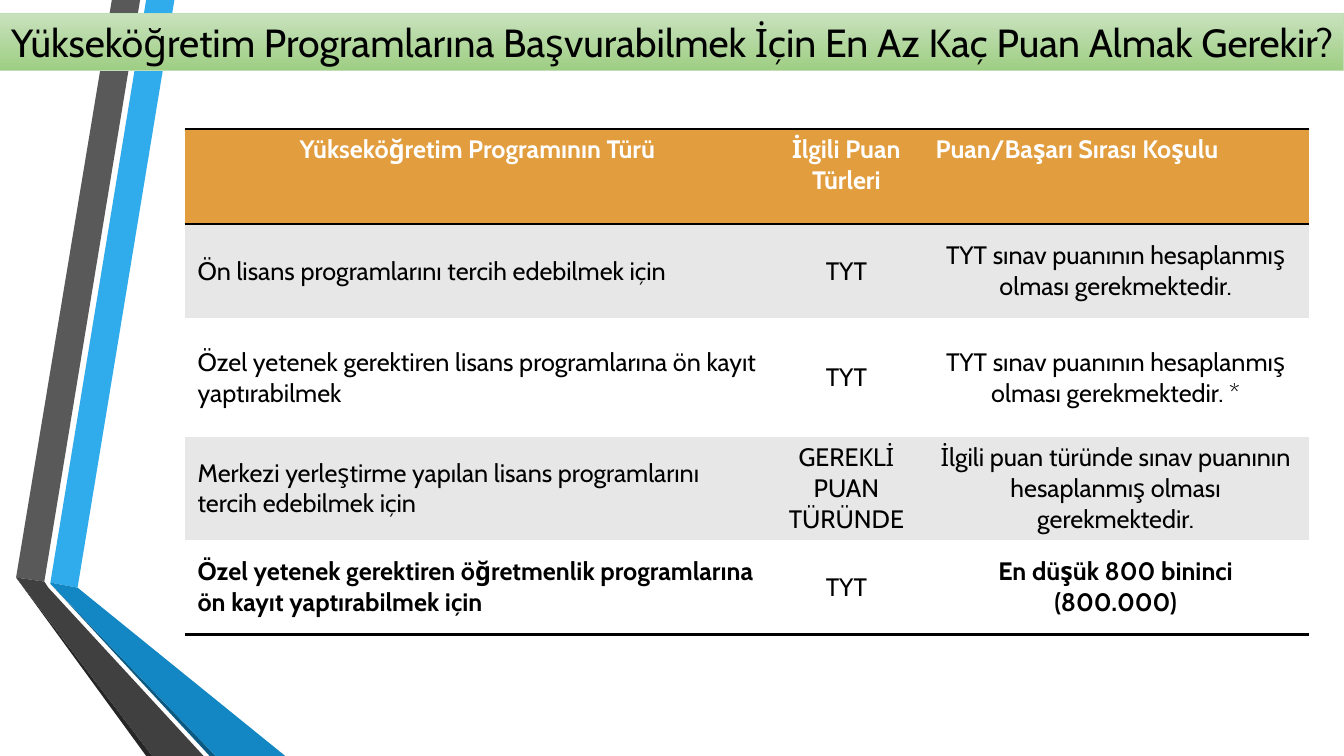
from lxml import etree
from pptx import Presentation
from pptx import util as u
from pptx.dml import color
from pptx.enum import shapes, text
from pptx.oxml import ns

FONT = "Cabin"
NO_STYLE_NO_GRID = "{2D5ABB26-0587-4C30-8999-92F81FD0307C}"
LEFT, CENTER = text.PP_ALIGN.LEFT, text.PP_ALIGN.CENTER

RIBBONS = [
    ("30ACEC", [(0.5, 5.78), (0.77, 5.83), (1.73, 0), (1.45, 0)]),
    ("595959", [(1.39, 0), (1.11, 0), (0.16, 5.73), (0.44, 5.77)]),
    ("262626", [(0.16, 5.73), (1.45, 7.5), (1.51, 7.5)]),
    ("0C5A82", [(0.5, 5.79), (2.08, 7.5), (2.14, 7.5)]),
    ("1287C3", [(0.5, 5.78), (0.5, 5.79), (2.14, 7.5), (2.83, 7.5), (0.77, 5.83)]),
    ("404040", [(2.02, 7.5), (0.48, 5.83), (0.44, 5.77), (0.16, 5.73), (1.51, 7.5)]),
]
TITLE = "Yükseköğretim Programlarına Başvurabilmek İçin En Az Kaç Puan Almak Gerekir?"
COLUMN_WIDTHS = [5.81, 1.51, 3.83]
ROW_HEIGHTS = [0.94, 0.94, 1.18, 1, 0.94]
REQUIREMENTS = [
    ("Yükseköğretim Programının Türü", "İlgili Puan Türleri", "Puan/Başarı Sırası Koşulu"),
    ("Ön lisans programlarını tercih edebilmek için", "TYT",
     "TYT sınav puanının hesaplanmış olması gerekmektedir."),
    ("Özel yetenek gerektiren lisans programlarına ön kayıt yaptırabilmek", "TYT",
     "TYT sınav puanının hesaplanmış olması gerekmektedir. *"),
    ("Merkezi yerleştirme yapılan lisans programlarını tercih edebilmek için",
     "GEREKLİ PUAN TÜRÜNDE",
     "İlgili puan türünde sınav puanının hesaplanmış olması gerekmektedir."),
    ("Özel yetenek gerektiren öğretmenlik programlarına ön kayıt yaptırabilmek için",
     "TYT", "En düşük 800 bininci (800.000)"),
]


def rgb(hex_color):
    return color.RGBColor.from_string(hex_color)


def style_paragraph(paragraph, size, hex_color, align, bold=False):
    paragraph.alignment = align
    font = paragraph.font
    font.name, font.size, font.bold = FONT, u.Pt(size), bold
    font.color.rgb = rgb(hex_color)


def add_ribbon(slide, hex_color, corners):
    points = [(u.Inches(x), u.Inches(y)) for x, y in corners]
    builder = slide.shapes.build_freeform(*points[0])
    builder.add_line_segments(points[1:], close=True)
    ribbon = builder.convert_to_shape()
    ribbon.shadow.inherit = False
    ribbon.fill.solid()
    ribbon.fill.fore_color.rgb = rgb(hex_color)
    ribbon.line.fill.background()


def add_title_band(slide):
    band = slide.shapes.add_shape(
        shapes.MSO_SHAPE.RECTANGLE, 0, u.Inches(0.13), u.Inches(13.33), u.Inches(0.57))
    band.shadow.inherit = False
    band.fill.gradient()
    band.fill.gradient_angle = 270
    for stop, hex_color in zip(band.fill.gradient_stops, ("C9E2BE", "9ECE83")):
        stop.color.rgb = rgb(hex_color)
    band.line.color.rgb = rgb("C0DEB3")
    band.line.width = u.Pt(0.75)
    frame = band.text_frame
    frame.word_wrap = False
    frame.vertical_anchor = text.MSO_ANCHOR.MIDDLE
    frame.text = TITLE
    style_paragraph(frame.paragraphs[0], 28, "000000", CENTER)


def add_rule(cell, side):
    """Draw a black 2 pt border on the top (lnT) or bottom (lnB) of a cell."""
    properties = cell._tc.get_or_add_tcPr()
    line = etree.SubElement(properties, ns.qn(f"a:{side}"), w=str(u.Pt(2)))
    fill = etree.SubElement(line, ns.qn("a:solidFill"))
    etree.SubElement(fill, ns.qn("a:srgbClr"), val="000000")


def fill_cell(cell, wording, row, column):
    header, last = row == 0, row == len(REQUIREMENTS) - 1
    if header:
        add_rule(cell, "lnT")
    if header or last:
        add_rule(cell, "lnB")
    cell.fill.solid()
    cell.fill.fore_color.rgb = rgb(
        "E29D3E" if header else "E7E7E7" if row % 2 else "FFFFFF")
    cell.margin_left = cell.margin_right = u.Inches(0.13)
    cell.margin_top = cell.margin_bottom = u.Inches(0.05)
    cell.vertical_anchor = text.MSO_ANCHOR.TOP if header else text.MSO_ANCHOR.MIDDLE
    cell.text = wording
    left_column = 2 if header else 0
    style_paragraph(cell.text_frame.paragraphs[0], 18,
                    "FFFFFF" if header else "000000",
                    LEFT if column == left_column else CENTER,
                    bold=header or (last and column != 1))


def add_requirements_table(slide):
    frame = slide.shapes.add_table(
        len(ROW_HEIGHTS), len(COLUMN_WIDTHS), u.Inches(1.83), u.Inches(1.28),
        u.Inches(sum(COLUMN_WIDTHS)), u.Inches(sum(ROW_HEIGHTS)))
    table = frame.table
    table.horz_banding = False
    next(frame._element.iter(ns.qn("a:tableStyleId"))).text = NO_STYLE_NO_GRID
    for column, width in zip(table.columns, COLUMN_WIDTHS):
        column.width = u.Inches(width)
    for row, height in zip(table.rows, ROW_HEIGHTS):
        row.height = u.Inches(height)
    for r, wordings in enumerate(REQUIREMENTS):
        for c, wording in enumerate(wordings):
            fill_cell(table.cell(r, c), wording, r, c)


def main():
    deck = Presentation()
    deck.slide_width, deck.slide_height = u.Inches(13.33), u.Inches(7.5)
    slide = deck.slides.add_slide(deck.slide_layouts[6])
    for hex_color, corners in RIBBONS:
        add_ribbon(slide, hex_color, corners)
    add_title_band(slide)
    add_requirements_table(slide)
    deck.save("out.pptx")


if __name__ == "__main__":
    main()
